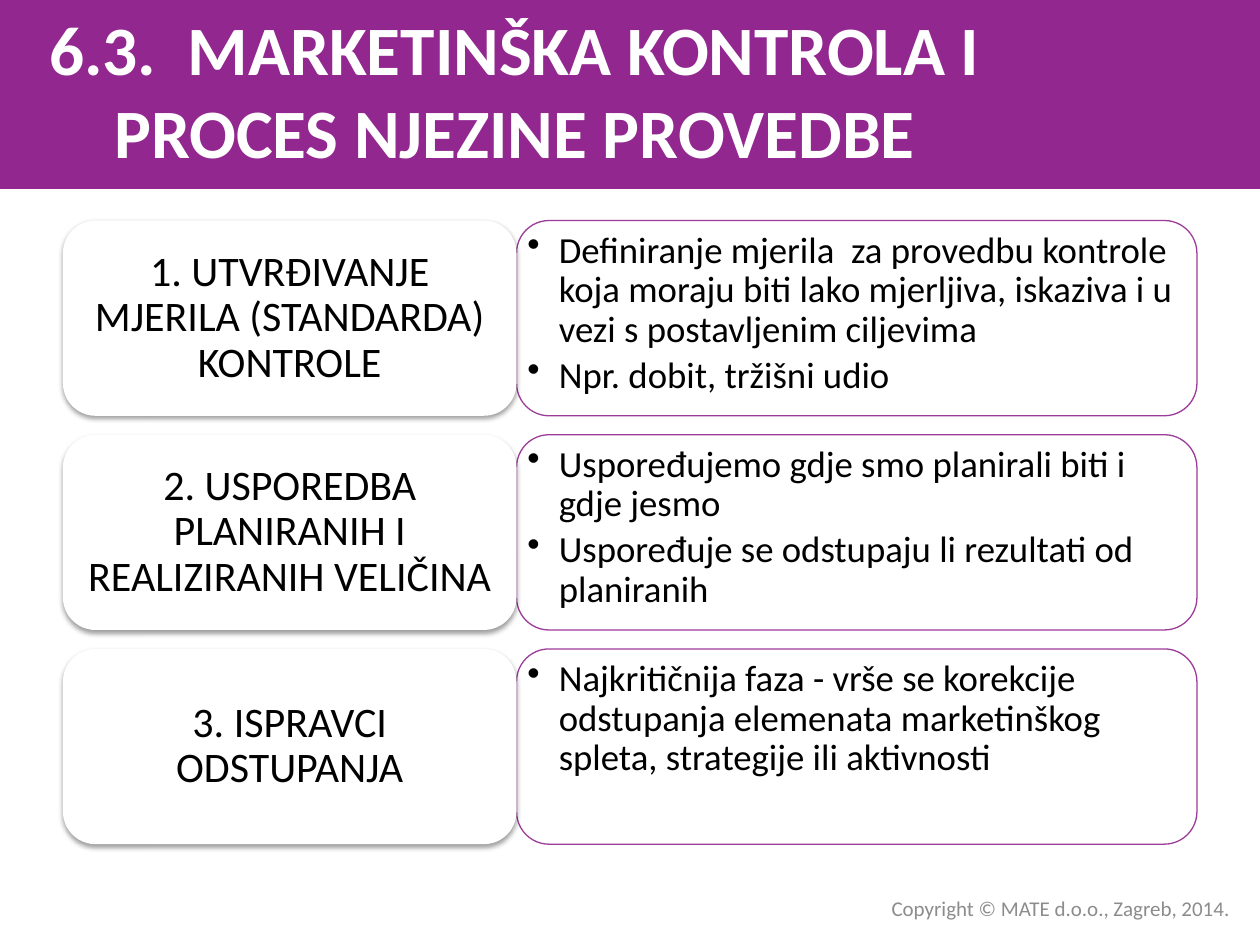
from dataclasses import dataclass
from lxml import etree
from pptx import Presentation
from pptx.dml.color import RGBColor
from pptx.enum.shapes import MSO_SHAPE
from pptx.enum.text import MSO_ANCHOR, PP_ALIGN
from pptx.oxml.ns import qn
from pptx.util import Pt

RECT, ROUNDED = MSO_SHAPE.RECTANGLE, MSO_SHAPE.ROUNDED_RECTANGLE
TOP, MIDDLE = MSO_ANCHOR.TOP, MSO_ANCHOR.MIDDLE
LEFT, CENTER, RIGHT = PP_ALIGN.LEFT, PP_ALIGN.CENTER, PP_ALIGN.RIGHT
PX = 9144  # 100 px to the inch


@dataclass(frozen=True)
class Theme:
    font: str = "Calibri"
    purple: RGBColor = RGBColor(0x92, 0x27, 0x8F)
    white: RGBColor = RGBColor(0xFF, 0xFF, 0xFF)
    black: RGBColor = RGBColor(0, 0, 0)
    grey: RGBColor = RGBColor(0x8C, 0x8C, 0x8C)
    title: float = 39.6
    step: float = 24
    detail: float = 21
    footer: float = 12


theme = Theme()

prs = Presentation()
prs.slide_width, prs.slide_height = 1000 * PX, 750 * PX
slide = prs.slides.add_slide(prs.slide_layouts[6])


def add_panel(kind, left, top, width, height, color):
    panel = slide.shapes.add_shape(kind, left * PX, top * PX, width * PX, height * PX)
    panel.shadow.inherit = False
    panel.fill.solid()
    panel.fill.fore_color.rgb = color
    panel.line.fill.background()
    return panel


def write(shape, lines, size, color, align, anchor=MIDDLE, spacing=1.0, bold=False, bullets=False):
    frame = shape.text_frame
    frame.word_wrap = True
    frame.vertical_anchor = anchor
    for index, line in enumerate(lines):
        paragraph = frame.paragraphs[0] if index == 0 else frame.add_paragraph()
        paragraph.text = line
        paragraph.alignment = align
        paragraph.line_spacing = spacing
        if bullets:
            paragraph.space_after = Pt(3.5)
            properties = paragraph._p.get_or_add_pPr()
            properties.set("marL", str(25 * PX))
            properties.set("indent", str(-25 * PX))
            etree.SubElement(properties, qn("a:buChar"), char="•")
        font = paragraph.font
        font.name, font.size, font.bold = theme.font, Pt(size), bold
        font.color.rgb = color


# Title band
add_panel(RECT, 0, 0, 1000, 150, theme.purple)

# Control steps, each with its details
steps = [
    ("1. UTVRĐIVANJE MJERILA (STANDARDA) KONTROLE",
     ["Definiranje mjerila  za provedbu kontrole koja moraju biti lako mjerljiva, "
      "iskaziva i u vezi s postavljenim ciljevima",
      "Npr. dobit, tržišni udio"]),
    ("2. USPOREDBA PLANIRANIH I REALIZIRANIH VELIČINA",
     ["Uspoređujemo gdje smo planirali biti i gdje jesmo",
      "Uspoređuje se odstupaju li rezultati od planiranih"]),
    ("3. ISPRAVCI ODSTUPANJA",
     ["Najkritičnija faza - vrše se korekcije odstupanja elemenata marketinškog "
      "spleta, strategije ili aktivnosti"]),
]
for row, (step, details) in enumerate(steps):
    top = 175 + row * 170

    detail_panel = add_panel(ROUNDED, 410, top, 540, 155, theme.white)
    detail_panel.line.color.rgb = theme.purple
    detail_panel.line.width = Pt(0.75)
    for color in detail_panel._element.spPr.iter(qn("a:srgbClr")):
        etree.SubElement(color, qn("a:alpha"), val="90000")
    frame = detail_panel.text_frame
    frame.margin_left = frame.margin_top = frame.margin_right = frame.margin_bottom = PX
    write(detail_panel, details, theme.detail, theme.black, LEFT, TOP, 0.9, bullets=True)

    step_panel = add_panel(ROUNDED, 50, top, 360, 155, theme.white)
    effects = step_panel._element.spPr.find(qn("a:effectLst"))
    shadow = etree.SubElement(effects, qn("a:outerShdw"), blurRad=str(Pt(3.1)),
                              dist=str(Pt(1.6)), dir="5400000", rotWithShape="0")
    shadow_color = etree.SubElement(shadow, qn("a:srgbClr"), val=str(theme.black))
    etree.SubElement(shadow_color, qn("a:alpha"), val="38000")
    write(step_panel, [step], theme.step, theme.black, CENTER, spacing=0.9)

# Title
title = slide.shapes.add_textbox(0, 8 * PX, 817 * PX, 125 * PX)
write(title, ["6.3.  MARKETINŠKA KONTROLA I PROCES NJEZINE PROVEDBE"],
      theme.title, theme.white, CENTER, bold=True)

# Copyright line
footer = slide.shapes.add_textbox(469 * PX, 706 * PX, 517 * PX, 30 * PX)
write(footer, ["Copyright © MATE d.o.o., Zagreb, 2014."], theme.footer, theme.grey, RIGHT)

prs.save("out.pptx")
